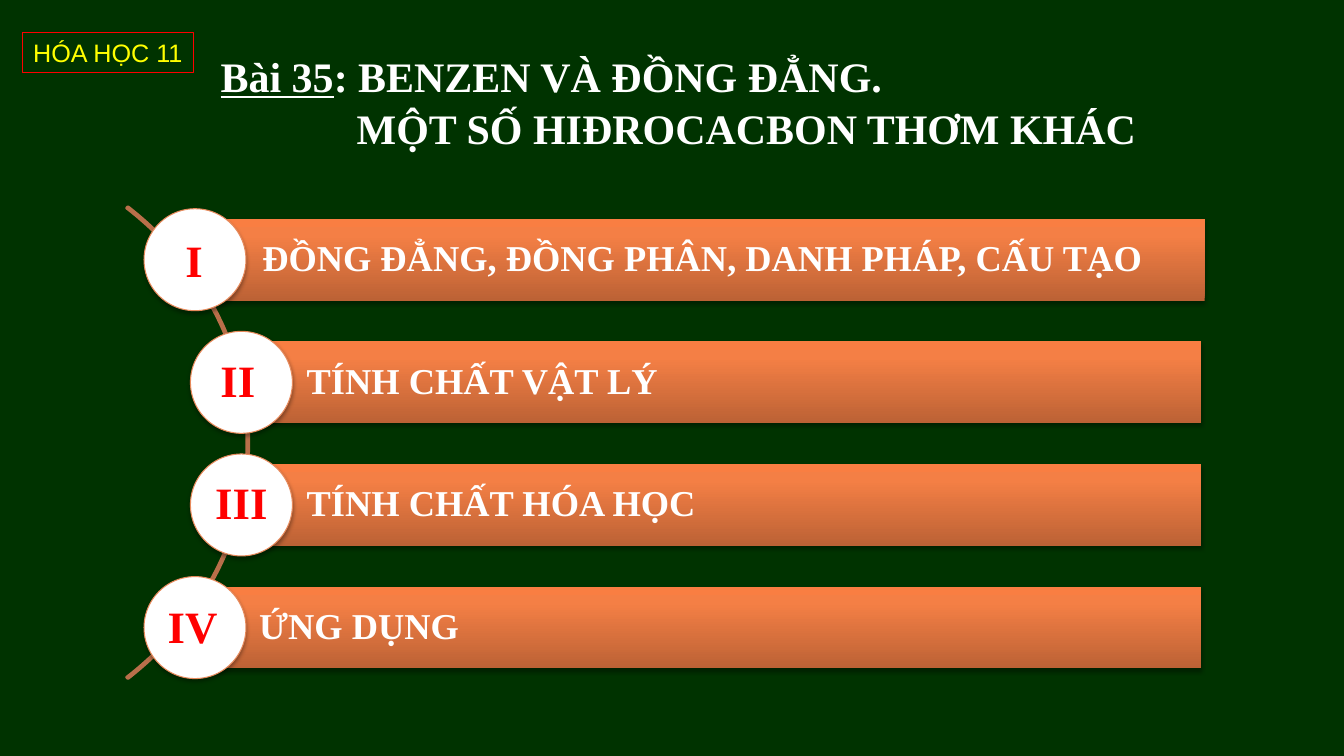
from dataclasses import dataclass

from pptx import Presentation
from pptx.dml.color import RGBColor
from pptx.enum.shapes import MSO_SHAPE
from pptx.enum.text import MSO_ANCHOR, PP_ALIGN
from pptx.oxml import parse_xml
from pptx.oxml.ns import nsdecls
from pptx.util import Cm, Pt


@dataclass(frozen=True)
class Theme:
    back: str = "003300"
    white: str = "FFFFFF"
    red: str = "FF0000"
    yellow: str = "FFFF00"
    arc: str = "B96F4A"
    rim: str = "E78A5C"
    shades: tuple = ((0, "BC6235"), (80, "F47F45"), (100, "F97E42"))
    serif: str = "Times New Roman"
    sans: str = "Arial"
    title: int = 30
    tag: int = 18
    topic: int = 26
    mark: int = 32


THEME = Theme()
RIGHT = 30.28
# numeral, topic, circle left, bar left, bar right, numeral shift
TOPICS = (
    ("I", "ĐỒNG ĐẲNG, ĐỒNG PHÂN, DANH PHÁP, CẤU TẠO", 3.63, 4.98, 30.36, (-0.02, 0)),
    ("II", "TÍNH CHẤT VẬT LÝ", 4.8, 6.1, RIGHT, (-0.09, -0.06)),
    ("III", "TÍNH CHẤT HÓA HỌC", 4.8, 6.1, RIGHT, (0, -0.09)),
    ("IV", "ỨNG DỤNG", 3.63, 4.9, RIGHT, (-0.06, -0.06)),
)


def apply(target, **values):
    for name, value in values.items():
        setattr(target, name, value)


def write(para, text, size, color, **values):
    run = para.add_run()
    run.text = text
    apply(run.font, size=Pt(size), **values)
    run.font.color.rgb = RGBColor.from_string(color)


def draw(slide, kind, box, fill=None, line=None, width=0.75):
    """Add a preset shape with no shadow; without a colour, no fill or line."""
    shape = slide.shapes.add_shape(kind, *map(Cm, box))
    shape.shadow.inherit = False
    if fill:
        shape.fill.solid()
        shape.fill.fore_color.rgb = RGBColor.from_string(fill)
    else:
        shape.fill.background()
    if line:
        shape.line.color.rgb = RGBColor.from_string(line)
        shape.line.width = Pt(width)
    else:
        shape.line.fill.background()
    return shape


def shade(shape):
    """Replace the fill with the upward three-stop gradient."""
    stops = "".join(
        f'<a:gs pos="{pos * 1000}"><a:srgbClr val="{color}"/></a:gs>'
        for pos, color in THEME.shades
    )
    grad = parse_xml(
        f'<a:gradFill {nsdecls("a")} rotWithShape="1"><a:gsLst>{stops}</a:gsLst>'
        '<a:lin ang="16200000" scaled="0"/></a:gradFill>'
    )
    props = shape.element.spPr
    props.replace(props.find("{*}noFill"), grad)


def lift(shape):
    """Give the shape a soft shadow below it."""
    props = shape.element.spPr
    glow = parse_xml(
        f'<a:effectLst {nsdecls("a")}><a:outerShdw blurRad="{Pt(3.1)}" '
        f'dist="{Pt(1.8)}" dir="5400000" rotWithShape="0">'
        '<a:srgbClr val="000000"><a:alpha val="35000"/></a:srgbClr>'
        '</a:outerShdw></a:effectLst>'
    )
    props.replace(props.find("{*}effectLst"), glow)


def add_title(slide, box):
    frame = slide.shapes.add_textbox(*map(Cm, box)).text_frame
    frame.word_wrap = True
    look = dict(size=THEME.title, color=THEME.white, name=THEME.serif, bold=True)
    first = frame.paragraphs[0]
    write(first, "Bài 35", underline=True, **look)
    write(first, ": BENZEN VÀ ĐỒNG ĐẲNG.", **look)
    second = frame.add_paragraph()
    second.space_before = Pt(1.2)
    second._p.get_or_add_pPr().set("marL", str(Cm(3.43)))
    write(second, "MỘT SỐ HIĐROCACBON THƠM KHÁC", **look)


def add_tag(slide, box):
    frame = draw(slide, MSO_SHAPE.RECTANGLE, box, line=THEME.red).text_frame
    apply(frame, word_wrap=False, vertical_anchor=MSO_ANCHOR.MIDDLE)
    para = frame.paragraphs[0]
    para.alignment = PP_ALIGN.CENTER
    write(para, "HÓA HỌC 11", THEME.tag, THEME.yellow, name=THEME.sans)


def add_arc(slide, box):
    arc = draw(slide, MSO_SHAPE.BLOCK_ARC, box, line=THEME.arc, width=2)
    for index, value in enumerate((189, 27, 0.003)):
        arc.adjustments[index] = value


def add_bar(slide, box, text):
    bar = draw(slide, MSO_SHAPE.RECTANGLE, box)
    shade(bar)
    lift(bar)
    frame, pad = bar.text_frame, Cm(0.18)
    apply(frame, word_wrap=True, vertical_anchor=MSO_ANCHOR.MIDDLE,
          margin_left=Cm(1.63), margin_right=pad, margin_top=pad, margin_bottom=pad)
    para = frame.paragraphs[0]
    apply(para, alignment=PP_ALIGN.LEFT, line_spacing=0.9)
    write(para, text, THEME.topic, THEME.white, name=THEME.serif, bold=True)


def add_mark(slide, box, text, shift):
    """Add a white circle and its numeral, moved from the centre by shift."""
    lift(draw(slide, MSO_SHAPE.OVAL, box, THEME.white, THEME.rim))
    left, top, width, height = box
    label = (left + shift[0], top + shift[1], width, height)
    frame = slide.shapes.add_textbox(*map(Cm, label)).text_frame
    apply(frame, word_wrap=True, vertical_anchor=MSO_ANCHOR.MIDDLE)
    para = frame.paragraphs[0]
    para.alignment = PP_ALIGN.CENTER
    write(para, text, THEME.mark, THEME.red, name=THEME.serif, bold=True)


def add_list(slide, top, pitch, size, height):
    for row, (mark, text, left, start, end, shift) in enumerate(TOPICS):
        y = top + row * pitch
        bar = (start, y + (size - height) / 2, end - start, height)
        add_bar(slide, bar, text)
        add_mark(slide, (left, y, size, size), mark, shift)


def main():
    deck = Presentation()
    apply(deck, slide_width=Cm(33.87), slide_height=Cm(19.05))
    slide = deck.slides.add_slide(deck.slide_layouts[6])
    slide.background.fill.solid()
    slide.background.fill.fore_color.rgb = RGBColor.from_string(THEME.back)
    add_title(slide, (5.31, 1.14, 24.36, 2.82))
    add_tag(slide, (0.56, 0.81, 4.32, 1.02))
    add_arc(slide, (-11.71, 3.23, 17.98, 15.85))
    add_list(slide, top=5.26, pitch=3.09, size=2.57, height=2.06)
    deck.save("out.pptx")


if __name__ == "__main__":
    main()
